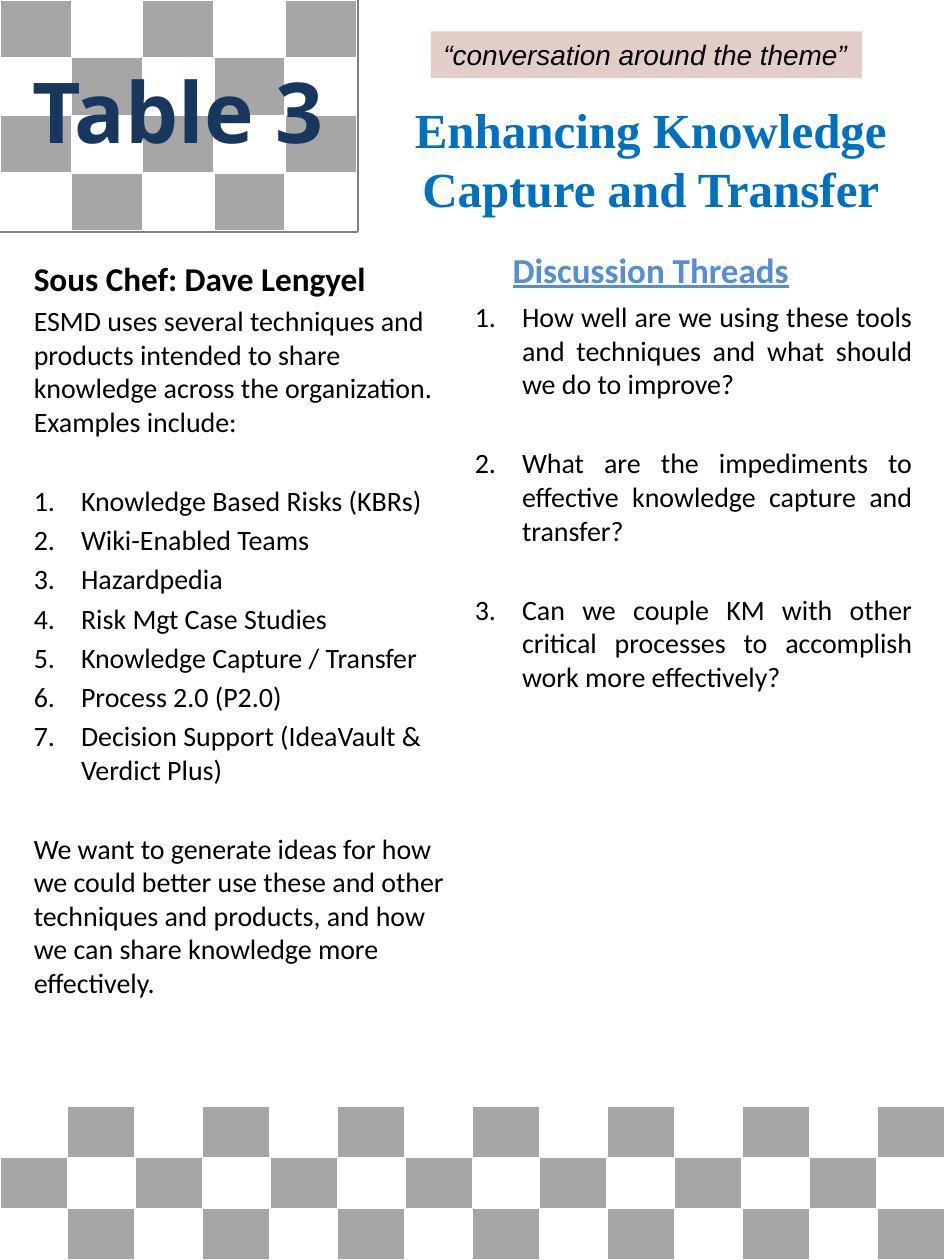
from lxml.etree import SubElement
from pptx import Presentation
from pptx.dml.color import RGBColor
from pptx.enum.shapes import MSO_SHAPE
from pptx.enum.text import MSO_ANCHOR, PP_ALIGN
from pptx.oxml.ns import qn
from pptx.util import Inches, Pt

BLACK = RGBColor(0x00, 0x00, 0x00)
WHITE = RGBColor(0xFF, 0xFF, 0xFF)
GRAY = RGBColor(0xA6, 0xA6, 0xA6)
BORDER_GRAY = RGBColor(0x80, 0x80, 0x80)
NAVY = RGBColor(0x17, 0x37, 0x5E)
BLUE = RGBColor(0x00, 0x70, 0xC0)
LIGHT_BLUE = RGBColor(0x55, 0x8E, 0xD5)
PINK = RGBColor(0xE3, 0xCD, 0xC7)
LINE_GAP = 3.2
SECTION_GAP = 26

presentation = Presentation()
presentation.slide_width = Inches(7.5)
presentation.slide_height = Inches(10)
slide = presentation.slides.add_slide(presentation.slide_layouts[6])


def add_text(box, text, *, size=16, font="Calibri", color=BLACK, bold=False, italic=False,
             underline=False, align=PP_ALIGN.LEFT, before=0, number=None):
    """Write one paragraph into the box, numbered when number is given."""
    frame = box.text_frame
    frame.word_wrap = True
    paragraph = frame.paragraphs[0]
    if paragraph.runs:
        paragraph = frame.add_paragraph()
    paragraph.alignment = align
    paragraph.space_before = Pt(before)
    if number:
        properties = paragraph._p.get_or_add_pPr()
        properties.set("marL", str(Inches(0.375)))
        properties.set("indent", str(-Inches(0.375)))
        SubElement(properties, qn("a:buFont"), typeface="+mj-lt")
        SubElement(properties, qn("a:buAutoNum"), type="arabicPeriod", startAt=str(number))
    run = paragraph.add_run()
    run.text = text
    run.font.size = Pt(size)
    run.font.name = font
    run.font.color.rgb = color
    run.font.bold = bold
    run.font.italic = italic
    run.font.underline = underline


def add_checkerboard(left, top, width, height, rows, columns, first_gray):
    """Draw a checkered table; first_gray is 0 when the top left cell is gray, else 1."""
    table = slide.shapes.add_table(rows, columns, Inches(left), Inches(top),
                                   Inches(width), Inches(height)).table
    for column in table.columns:
        column.width = Inches(width / columns)
    for row_index, row in enumerate(table.rows):
        row.height = Inches(height / rows)
        for column_index, cell in enumerate(row.cells):
            cell.margin_top = cell.margin_bottom = 0
            cell.fill.solid()
            is_gray = (row_index + column_index) % 2 == first_gray
            cell.fill.fore_color.rgb = GRAY if is_gray else WHITE


# Checkered corner and footer
corner = slide.shapes.add_shape(MSO_SHAPE.RECTANGLE, 0, 0, Inches(2.83), Inches(1.83))
corner.shadow.inherit = False
corner.fill.solid()
corner.fill.fore_color.rgb = WHITE
corner.line.color.rgb = BORDER_GRAY
corner.line.width = Pt(2.5)
add_checkerboard(0, 0, 2.83, 1.83, 4, 5, 0)
add_checkerboard(0, 8.78, 7.5, 1.22, 3, 14, 1)

# Title
title = slide.shapes.add_textbox(Inches(2.83), Inches(0.67), Inches(4.67), Inches(1.17))
title.text_frame.vertical_anchor = MSO_ANCHOR.MIDDLE
add_text(title, "Enhancing Knowledge Capture and Transfer", size=28, font="Times New Roman",
         color=BLUE, bold=True, align=PP_ALIGN.CENTER)

# Discussion questions
questions = slide.shapes.add_textbox(Inches(3.67), Inches(2.33), Inches(3.67), Inches(6.42))
questions.fill.solid()
questions.fill.fore_color.rgb = WHITE
for number, question in enumerate([
    "How well are we using these tools and techniques and what should we do to improve?",
    "What are the impediments to effective knowledge capture and transfer?",
    "Can we couple KM with other critical processes to accomplish work more effectively?",
], start=1):
    add_text(questions, question, align=PP_ALIGN.JUSTIFY, number=number,
             before=LINE_GAP if number == 1 else SECTION_GAP)

# Background and examples
background = slide.shapes.add_textbox(Inches(0.17), Inches(2), Inches(3.5), Inches(6.74))
add_text(background, "Sous Chef: Dave Lengyel", size=19, bold=True, before=LINE_GAP)
add_text(background, "ESMD uses several techniques and products intended to share knowledge "
         "across the organization. Examples include:", before=LINE_GAP)
for number, example in enumerate([
    "Knowledge Based Risks (KBRs)",
    "Wiki-Enabled Teams",
    "Hazardpedia",
    "Risk Mgt Case Studies",
    "Knowledge Capture / Transfer",
    "Process 2.0 (P2.0)",
    "Decision Support (IdeaVault & Verdict Plus)",
], start=1):
    add_text(background, example, number=number,
             before=SECTION_GAP if number == 1 else LINE_GAP)
add_text(background, "We want to generate ideas for how we could better use these and other "
         "techniques and products, and how we can share knowledge more effectively.",
         before=SECTION_GAP)

# Headings
table_label = slide.shapes.add_textbox(0, Inches(0.42), Inches(2.83), Inches(0.91))
add_text(table_label, "Table 3", size=48, font="Open Sans", color=NAVY, bold=True,
         align=PP_ALIGN.CENTER)

threads_heading = slide.shapes.add_textbox(Inches(2.83), Inches(1.92), Inches(4.67), Inches(0.44))
add_text(threads_heading, "Discussion Threads", size=20, color=LIGHT_BLUE, bold=True,
         underline=True, align=PP_ALIGN.CENTER)

theme_label = slide.shapes.add_textbox(Inches(3.42), Inches(0.25), Inches(3.42), Inches(0.37))
theme_label.fill.solid()
theme_label.fill.fore_color.rgb = PINK
add_text(theme_label, "“conversation around the theme”", font="Arial", italic=True, before=8)

presentation.save("out.pptx")
